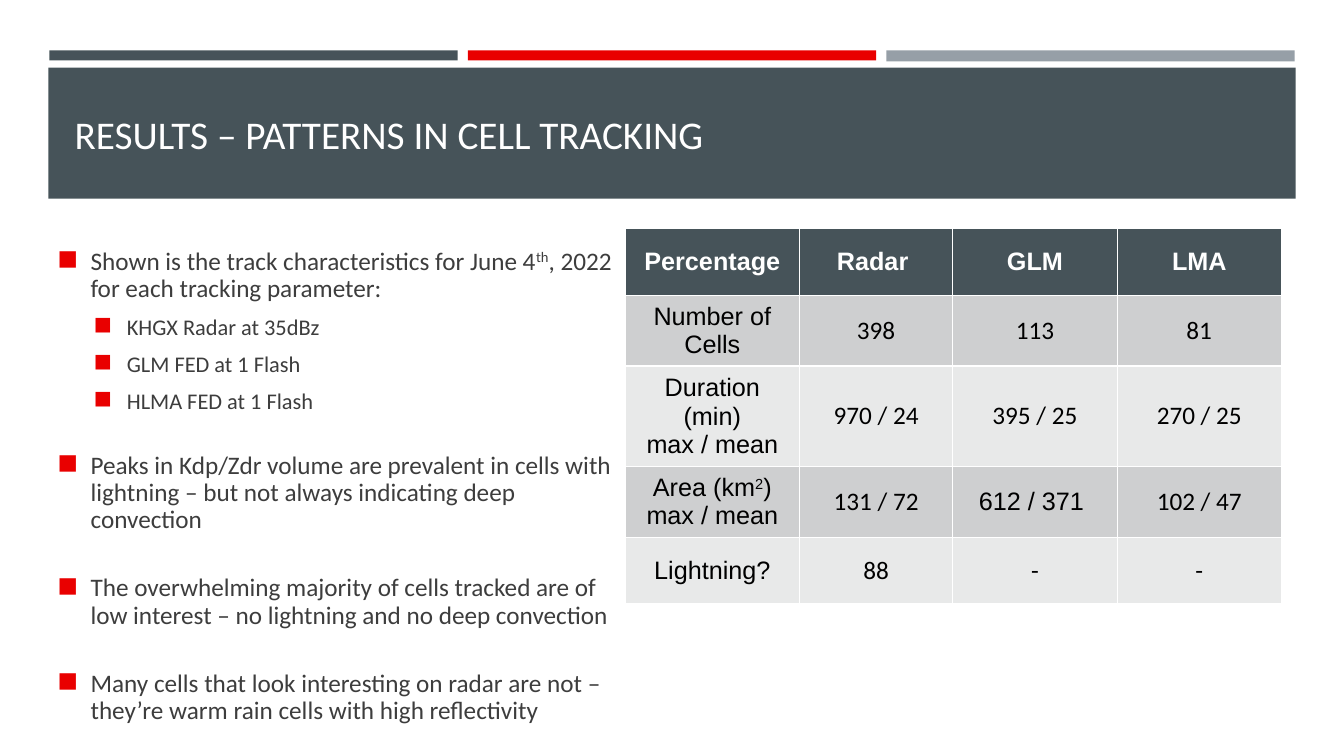
"""Build the slide on patterns in cell tracking."""
import pptx
import pptx.util
import pptx.dml.color
import pptx.enum.shapes
import pptx.enum.text
import lxml.etree

Inches = pptx.util.Inches
Pt = pptx.util.Pt
RGBColor = pptx.dml.color.RGBColor
ALIGN = pptx.enum.text.PP_ALIGN
MIDDLE = pptx.enum.text.MSO_ANCHOR.MIDDLE
SLATE = RGBColor(0x46, 0x53, 0x59)
RED = RGBColor(0xE9, 0x00, 0x00)
STEEL = RGBColor(0x96, 0x9F, 0xA7)
WHITE = RGBColor(0xFF, 0xFF, 0xFF)
BLACK = RGBColor(0x00, 0x00, 0x00)
INK = RGBColor(0x3D, 0x3D, 0x3D)
DARK = RGBColor(0xCE, 0xCF, 0xD0)
LIGHT = RGBColor(0xE8, 0xE9, 0xE9)


def add_runs(para, text, form):
    """Add text, raising each odd part between carets."""
    for i, part in enumerate(text.split("^")):
        run = para.add_run()
        run.text = part
        run.font.color.rgb = form["color"]
        for key in ("name", "size", "bold"):
            setattr(run.font, key, form[key])
        if i % 2:
            run.font._element.set("baseline", "30000")


def add_xml(node, tag, **attrs):
    """Append a drawing element with attributes."""
    child = lxml.etree.SubElement(node, pptx.oxml.ns.qn(tag))
    for key, value in attrs.items():
        child.set(key, str(value))
    return child


deck = pptx.Presentation()
deck.slide_width = Inches(13.33)
deck.slide_height = Inches(7.5)
slide = deck.slides.add_slide(deck.slide_layouts[5])

bars = [
    (0.49, 0.5, 4.05, 0.1, SLATE),
    (8.79, 0.5, 4.05, 0.11, STEEL),
    (4.64, 0.5, 4.05, 0.1, RED),
    (0.48, 0.67, 12.37, 1.3, SLATE),
]
for *box, color in bars:
    bar = slide.shapes.add_shape(
        pptx.enum.shapes.MSO_SHAPE.RECTANGLE, *map(Inches, box))
    bar.shadow.inherit = False
    bar.fill.solid()
    bar.fill.fore_color.rgb = color
    bar.line.fill.background()

title = slide.shapes.title
place = {"left": 0.64, "top": 0.77, "width": 12.06, "height": 1.11}
for key, value in place.items():
    setattr(title, key, Inches(value))
title.text_frame.vertical_anchor = MIDDLE
head = title.text_frame.paragraphs[0]
head.alignment = ALIGN.LEFT
add_runs(head, "RESULTS – PATTERNS IN CELL TRACKING",
         {"name": "Calibri", "size": Pt(28), "bold": False, "color": WHITE})
tree = title._element.getparent()
tree.remove(title._element)
tree.append(title._element)

points = [
    (0, 0, "Shown is the track characteristics for June 4^th^, 2022 "
     "for each tracking parameter:"),
    (1, 9.2, "KHGX Radar at 35dBz"),
    (1, 9.2, "GLM FED at 1 Flash"),
    (1, 9.2, "HLMA FED at 1 Flash"),
    (0, 27.2, "Peaks in Kdp/Zdr volume are prevalent in cells with lightning "
     "– but not always indicating deep convection"),
    (0, 29.4, "The overwhelming majority of cells tracked are of low interest "
     "– no lightning and no deep convection"),
    (0, 29.4, "Many cells that look interesting on radar are not – "
     "they’re warm rain cells with high reflectivity"),
]
body = slide.shapes.add_textbox(
    Inches(0.47), Inches(2.27), Inches(5.72), Inches(5.12)).text_frame
body.word_wrap = True
body.vertical_anchor = MIDDLE
for i, (level, gap, text) in enumerate(points):
    para = body.add_paragraph() if i else body.paragraphs[0]
    form = {"level": level, "line_spacing": 0.9, "space_before": Pt(gap)}
    for key, value in form.items():
        setattr(para, key, value)
    props = para._p.get_or_add_pPr()
    props.set("marL", str(Inches(0.33 + 0.36 * level)))
    props.set("indent", str(Inches(-0.33)))
    add_xml(add_xml(props, "a:buClr"), "a:srgbClr", val=RED)
    add_xml(props, "a:buChar", char="◼")
    add_runs(para, text, {"name": "Calibri", "size": Pt(18 - 2 * level),
                          "bold": False, "color": INK})

rows = [
    ("Percentage", "Radar ", "GLM", "LMA"),
    ("Number of Cells", "398", "113", "81"),
    ("Duration (min)\nmax / mean", "970 / 24", "395 / 25", "270 / 25"),
    ("Area (km^2^)\nmax / mean", "131 / 72", "612 / 371 ", "102 / 47"),
    ("Lightning?", "88", "-", "-"),
]
widths = [1.73, 1.52, 1.63, 1.63]
table = slide.shapes.add_table(
    len(rows), len(widths), Inches(6.2), Inches(2.27),
    Inches(sum(widths)), Inches(0.66 * len(rows))).table
for col, width in zip(table.columns, widths):
    col.width = Inches(width)
for r, row in enumerate(rows):
    table.rows[r].height = Inches(0.66)
    for c, text in enumerate(row):
        cell = table.cell(r, c)
        cell.vertical_anchor = MIDDLE
        if r == 1 and c:
            for side in ("left", "right", "top"):
                setattr(cell, "margin_" + side, Inches(0.01))
            cell.margin_bottom = 0
        props = cell._tc.get_or_add_tcPr()
        for tag in ("a:lnL", "a:lnR", "a:lnT", "a:lnB"):
            edge = add_xml(props, tag, w=Pt(1))
            add_xml(add_xml(edge, "a:solidFill"), "a:srgbClr", val=WHITE)
        cell.fill.solid()
        cell.fill.fore_color.rgb = (DARK if r % 2 else LIGHT) if r else SLATE
        arial = r == 0 or c == 0 or (r, c) == (3, 2)
        form = {"name": "Arial" if arial else "Calibri", "size": Pt(18),
                "bold": r == 0, "color": BLACK if r else WHITE}
        for i, line in enumerate(text.split("\n")):
            frame = cell.text_frame
            para = frame.add_paragraph() if i else frame.paragraphs[0]
            para.alignment = ALIGN.CENTER
            add_runs(para, line, form)

deck.save("out.pptx")
